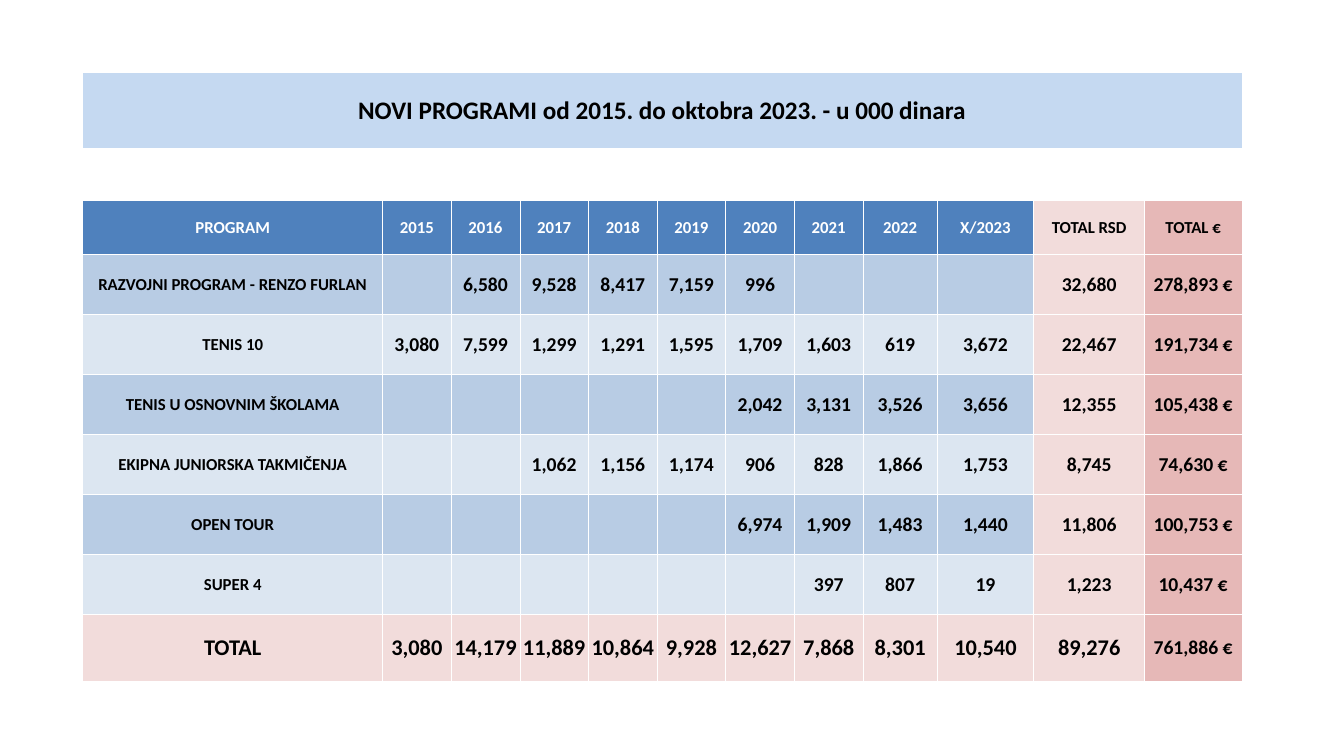
import pptx
import pptx.dml.color
import pptx.enum.text
import pptx.util
from lxml import etree
from pptx.oxml import ns

Cm = pptx.util.Cm
RGBColor = pptx.dml.color.RGBColor

BLACK = RGBColor(0x00, 0x00, 0x00)
WHITE = RGBColor(0xFF, 0xFF, 0xFF)
TITLE_BLUE = RGBColor(0xC5, 0xD9, 0xF1)
HEADER_BLUE = RGBColor(0x4F, 0x81, 0xBD)
BAND_DARK = RGBColor(0xB8, 0xCC, 0xE4)
BAND_LIGHT = RGBColor(0xDC, 0xE6, 0xF1)
TOTAL_PINK = RGBColor(0xF2, 0xDC, 0xDB)
EURO_ROSE = RGBColor(0xE6, 0xB8, 0xB7)

TITLE = "NOVI PROGRAMI od 2015. do oktobra 2023. - u 000 dinara"
HEADINGS = ["PROGRAM", "2015", "2016", "2017", "2018", "2019", "2020", "2021",
            "2022", "X/2023", "TOTAL RSD", "TOTAL €"]
PROGRAMS = [
    ["RAZVOJNI PROGRAM - RENZO FURLAN", "", "6,580", "9,528", "8,417", "7,159",
     "996", "", "", "", "32,680", "278,893 €"],
    ["TENIS 10", "3,080", "7,599", "1,299", "1,291", "1,595",
     "1,709", "1,603", "619", "3,672", "22,467", "191,734 €"],
    ["TENIS U OSNOVNIM ŠKOLAMA", "", "", "", "", "",
     "2,042", "3,131", "3,526", "3,656", "12,355", "105,438 €"],
    ["EKIPNA JUNIORSKA TAKMIČENJA", "", "", "1,062", "1,156", "1,174",
     "906", "828", "1,866", "1,753", "8,745", "74,630 €"],
    ["OPEN TOUR", "", "", "", "", "",
     "6,974", "1,909", "1,483", "1,440", "11,806", "100,753 €"],
    ["SUPER 4", "", "", "", "", "", "", "397", "807", "19", "1,223", "10,437 €"],
]
TOTALS = ["TOTAL", "3,080", "14,179", "11,889", "10,864", "9,928", "12,627",
          "7,868", "8,301", "10,540", "89,276", "761,886 €"]

COLUMN_WIDTHS = [7.55] + [1.73] * 7 + [1.87, 2.43, 2.8, 2.44]
ROW_HEIGHTS = [1.89, 1.34, 1.34] + [1.51] * len(PROGRAMS) + [1.69]
RSD_COLUMN = HEADINGS.index("TOTAL RSD")
EURO_COLUMN = HEADINGS.index("TOTAL €")
HEADER_ROW = 2


def set_borders(cell, visible_sides):
    properties = cell._tc.get_or_add_tcPr()
    for side in "LRTB":
        line = etree.SubElement(properties, ns.qn(f"a:ln{side}"))
        if side in visible_sides:
            line.set("w", str(pptx.util.Pt(0.5)))
            solid = etree.SubElement(line, ns.qn("a:solidFill"))
            etree.SubElement(solid, ns.qn("a:srgbClr"), val=str(WHITE))
        else:
            etree.SubElement(line, ns.qn("a:noFill"))


def set_fill(cell, color):
    cell.fill.solid()
    cell.fill.fore_color.rgb = color


def write_cell(cell, text, size, color=BLACK):
    cell.margin_left = cell.margin_right = cell.margin_top = Cm(0.02)
    cell.margin_bottom = 0
    cell.vertical_anchor = pptx.enum.text.MSO_ANCHOR.MIDDLE
    if not text:
        return
    cell.text_frame.text = text
    paragraph = cell.text_frame.paragraphs[0]
    paragraph.alignment = pptx.enum.text.PP_ALIGN.CENTER
    font = paragraph.runs[0].font
    font.name = "Calibri"
    font.size = pptx.util.Pt(size)
    font.bold = True
    font.color.rgb = color


def inner_sides(row, column):
    sides = ""
    if column > 0:
        sides += "L"
    if column < len(HEADINGS) - 1:
        sides += "R"
    if row > HEADER_ROW:
        sides += "T"
    if row < len(ROW_HEIGHTS) - 1:
        sides += "B"
    return sides


def fill_row(table, row, texts, sizes, background, color=BLACK):
    for column, (text, size) in enumerate(zip(texts, sizes)):
        cell = table.cell(row, column)
        summary = {RSD_COLUMN: TOTAL_PINK, EURO_COLUMN: EURO_ROSE}
        set_borders(cell, inner_sides(row, column))
        set_fill(cell, summary.get(column, background))
        write_cell(cell, text, size, BLACK if column in summary else color)


def add_title_and_gap(table):
    for column in range(len(HEADINGS)):
        for row in range(HEADER_ROW):
            set_borders(table.cell(row, column), "")
        table.cell(1, column).fill.background()
    title = table.cell(0, 0)
    title.merge(table.cell(0, len(HEADINGS) - 1))
    set_fill(title, TITLE_BLUE)
    write_cell(title, TITLE, 18)


def add_budget_table(slide):
    frame = slide.shapes.add_table(
        len(ROW_HEIGHTS), len(COLUMN_WIDTHS), Cm(2.09), Cm(1.84),
        Cm(sum(COLUMN_WIDTHS)), Cm(sum(ROW_HEIGHTS)))
    table = frame.table
    table.first_row = False
    table.horz_banding = False
    for column, width in zip(table.columns, COLUMN_WIDTHS):
        column.width = Cm(width)
    for row, height in zip(table.rows, ROW_HEIGHTS):
        row.height = Cm(height)
    return table


def main():
    presentation = pptx.Presentation()
    presentation.slide_width = Cm(33.87)
    presentation.slide_height = Cm(19.05)
    slide = presentation.slides.add_slide(presentation.slide_layouts[6])

    table = add_budget_table(slide)
    add_title_and_gap(table)
    count = len(HEADINGS)
    fill_row(table, HEADER_ROW, HEADINGS, [12] * count, HEADER_BLUE, WHITE)
    for index, program in enumerate(PROGRAMS):
        band = BAND_LIGHT if index % 2 else BAND_DARK
        fill_row(table, HEADER_ROW + 1 + index, program,
                 [12] + [14] * (count - 1), band)
    fill_row(table, len(ROW_HEIGHTS) - 1, TOTALS,
             [16] * (count - 1) + [14], TOTAL_PINK)

    presentation.save("out.pptx")


if __name__ == "__main__":
    main()
